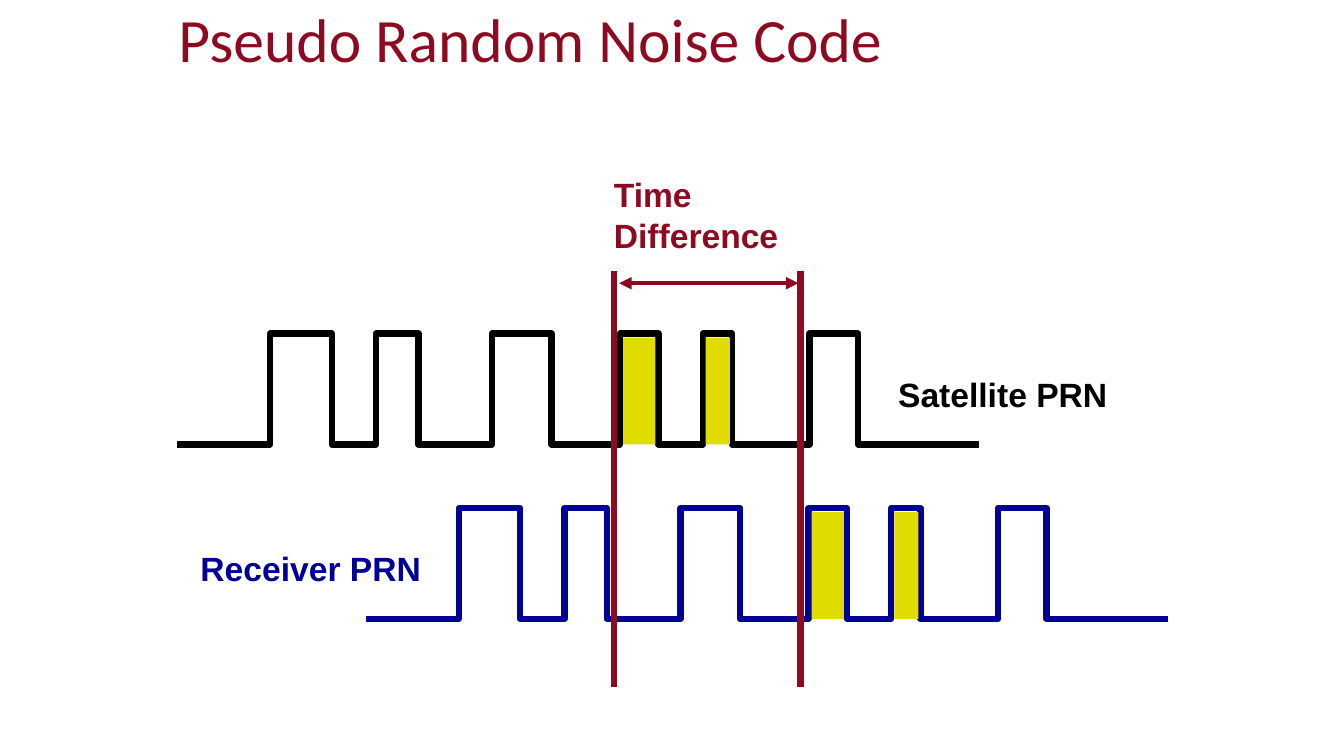
from pptx import Presentation
from pptx.dml.color import RGBColor
from pptx.enum.shapes import MSO_CONNECTOR, MSO_SHAPE
from pptx.enum.text import MSO_ANCHOR, MSO_AUTO_SIZE, PP_ALIGN
from pptx.oxml import parse_xml
from pptx.oxml.ns import nsdecls, qn
from pptx.util import Inches, Pt

STRAIGHT, RECT = MSO_CONNECTOR.STRAIGHT, MSO_SHAPE.RECTANGLE
MIDDLE, LEFT, GROW = MSO_ANCHOR.MIDDLE, PP_ALIGN.LEFT, MSO_AUTO_SIZE.SHAPE_TO_FIT_TEXT

THEME = {
    "red": RGBColor.from_string("8E0A20"),
    "navy": RGBColor.from_string("000094"),
    "black": RGBColor.from_string("000000"),
    "yellow": RGBColor.from_string("E1DC00"),
    "gold": "B08A10",
    "title": {"name": "Calibri", "size": Pt(44), "bold": False},
    "label": {"name": "Arial", "size": Pt(24), "bold": True},
    "thick": Pt(4.5),
    "thin": Pt(3),
}


def style(font, kind, color):
    for key, value in THEME[kind].items():
        setattr(font, key, value)
    font.color.rgb = THEME[color]


def rule(x1, y1, x2, y2, width):
    line = slide.shapes.add_connector(STRAIGHT, *map(Inches, (x1, y1, x2, y2)))
    line.line.color.rgb = THEME["red"]
    line.line.width = THEME[width]
    line._element.spPr.append(parse_xml(f"<a:effectLst {nsdecls('a')}/>"))
    return line


prs = Presentation()
prs.slide_width, prs.slide_height = Inches(13.33), Inches(7.5)
slide = prs.slides.add_slide(prs.slide_layouts[5])

# Title with a gold text shadow
title = slide.shapes.title
title.left, title.top, title.width, title.height = map(Inches, (1.67, 0, 10, 0.85))
title.text_frame.vertical_anchor = MIDDLE
para = title.text_frame.paragraphs[0]
para.alignment, para.line_spacing = LEFT, 0.9
run = para.add_run()
run.text = "Pseudo Random Noise Code"
style(run.font, "title", "red")
run._r.rPr.find(qn("a:solidFill")).addnext(parse_xml(
    f'<a:effectLst {nsdecls("a")}><a:outerShdw dist="35921" dir="2700000">'
    f'<a:srgbClr val="{THEME["gold"]}"/></a:outerShdw></a:effectLst>'))

# Code waves: the receiver repeats the satellite code, moved by (lag, drop)
START, END, HIGH, LOW = 1.76, 9.71, 3.31, 4.41
PULSES = [(2.68, 3.29), (3.73, 4.15), (4.88, 5.47),
          (6.15, 6.53), (6.97, 7.26), (8.03, 8.51)]
LAG, DROP = 1.87, 1.73
CODES = [("navy", LAG, DROP), ("black", 0, 0)]

for color, dx, dy in CODES:
    pts = []
    for rise, fall in PULSES:
        pts += [(rise, LOW), (rise, HIGH), (fall, HIGH), (fall, LOW)]
    pts.append((END, LOW))
    path = slide.shapes.build_freeform(Inches(START + dx), Inches(LOW + dy))
    path.add_line_segments([(Inches(x + dx), Inches(y + dy)) for x, y in pts], close=False)
    wave = path.convert_to_shape()
    wave.shadow.inherit = False
    wave.fill.background()
    wave.line.color.rgb = THEME[color]
    wave.line.width = THEME["thick"]
    wave.line._get_or_add_ln().append(parse_xml(f"<a:round {nsdecls('a')}/>"))

# Time marks
for x in (7.94, 6.09):
    rule(x, 6.82, x, 2.69, "thick")

# Matching pulses
for left, width in ((6.18, 0.32), (7, 0.24)):
    for color, dx, dy in CODES:
        bar = slide.shapes.add_shape(
            RECT, *map(Inches, (left + dx, 3.35 + dy, width, 1.06)))
        bar.shadow.inherit = False
        bar.fill.solid()
        bar.fill.fore_color.rgb = THEME["yellow"]
        bar.line.fill.background()

# Time difference arrow
arrow = rule(6.14, 2.81, 7.92, 2.81, "thin")
for end in ("headEnd", "tailEnd"):
    arrow.line._get_or_add_ln().append(
        parse_xml(f'<a:{end} {nsdecls("a")} type="triangle"/>'))

# Labels
LABELS = [
    ("Receiver PRN", "navy", (1.89, 5.39, 3.16, 0.5)),
    ("Satellite PRN", "black", (8.81, 3.66, 2.76, 0.5)),
    ("Time Difference", "red", (5.99, 1.68, 2.27, 0.91)),
]
for text, color, place in LABELS:
    frame = slide.shapes.add_textbox(*map(Inches, place)).text_frame
    frame.word_wrap, frame.auto_size = True, GROW
    run = frame.paragraphs[0].add_run()
    run.text = text
    style(run.font, "label", color)

prs.save("out.pptx")
